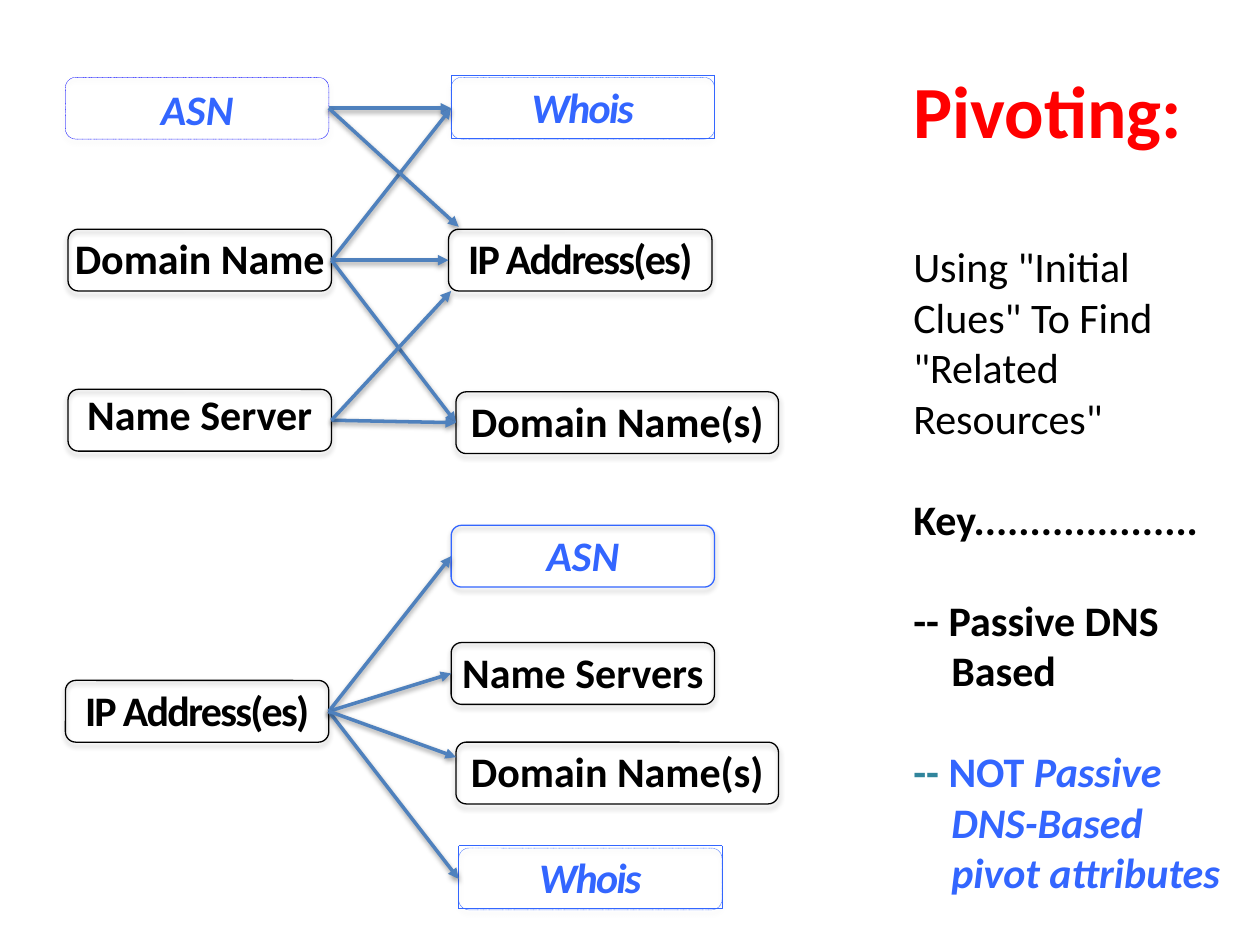
from lxml import etree
from pptx import Presentation
from pptx import util as u
from pptx.dml.color import RGBColor
from pptx.enum import dml, shapes, text
from pptx.oxml import ns

BLACK, BLUE, RED, TEAL, STEEL = "000000", "3366FF", "FF0000", "31859C", "4F81BD"
BOX_HEIGHT = 35.3
TOP, LEFT, BOTTOM, RIGHT = range(4)


def paint(color_format, color):
    color_format.rgb = RGBColor.from_string(color)


def add_node(parent, tag, **attributes):
    return etree.SubElement(parent, ns.qn(tag), attributes)


def add_shadow(properties, opacity, distance):
    """Append a soft downward shadow to shape properties."""
    effects = add_node(properties, "a:effectLst")
    outer = add_node(effects, "a:outerShdw", blurRad=str(u.Pt(3.1)),
                     dist=str(u.Pt(distance)), dir="5400000", rotWithShape="0")
    color = add_node(outer, "a:srgbClr", val=BLACK)
    add_node(color, "a:alpha", val=str(opacity * 1000))


def add_text(para, words, size=24, color=BLACK, bold=True, italic=False, spacing=0):
    """Add one formatted span per line, with line breaks between them."""
    for index, line in enumerate(words.split("\n")):
        if index:
            para.add_line_break()
        span = para.add_run()
        span.text = line
        font = span.font
        font.name, font.size = "Calibri", u.Pt(size)
        font.bold, font.italic = bold, italic
        paint(font.color, color)
        if spacing:
            span._r.get_or_add_rPr().set("spc", str(spacing * 100))


class Diagram:
    def __init__(self, page):
        self.page = page

    def outline(self, shape, color, dotted):
        shape.fill.background()
        paint(shape.line.color, color)
        shape.line.width = u.Pt(0.25 if dotted else 0.75)
        if dotted:
            shape.line.dash_style = dml.MSO_LINE.ROUND_DOT

    def text_box(self, left, top, width, height):
        box = self.page.shapes.add_textbox(*map(u.Pt, (left, top, width, height)))
        box.text_frame.word_wrap = True
        return box

    def node(self, words, left, top, width=150.5, color=BLACK, line=None,
             overhang=11, lift=1.4, spacing=0, dotted=False, framed=False):
        """Draw a rounded box with its label; a framed label has its own outline."""
        line = line or color
        box = self.page.shapes.add_shape(
            shapes.MSO_SHAPE.ROUNDED_RECTANGLE,
            *map(u.Pt, (left, top, width, BOX_HEIGHT)))
        self.outline(box, line, dotted)
        add_shadow(box._element.spPr, 35, 1.8)
        label = self.text_box(left - overhang, top - lift, width + 2 * overhang, 36)
        label.text_frame.auto_size = text.MSO_AUTO_SIZE.SHAPE_TO_FIT_TEXT
        if framed:
            self.outline(label, line, dotted)
        para = label.text_frame.paragraphs[0]
        para.alignment = text.PP_ALIGN.CENTER
        add_text(para, words, color=color, italic=color == BLUE, spacing=spacing)
        return box

    def arrow(self, source, target=None, point=(0, 0)):
        """Run from a box's right side to a target's left side, or to a point."""
        start = (source.left + source.width, source.top + source.height // 2)
        link = self.page.shapes.add_connector(
            shapes.MSO_CONNECTOR.STRAIGHT, *start, *map(u.Pt, point))
        link.begin_connect(source, RIGHT)
        if target is not None:
            link.end_connect(target, LEFT)
        paint(link.line.color, STEEL)
        link.line.width = u.Pt(2)
        add_node(link.line._get_or_add_ln(), "a:tailEnd", type="triangle")
        add_shadow(link._element.spPr, 38, 1.6)

    def side_text(self, left, top, width, height, paragraphs):
        """Write (space before, hanging indent, spans) paragraphs, centred in height."""
        frame = self.text_box(left, top, width, height).text_frame
        frame.vertical_anchor = text.MSO_ANCHOR.MIDDLE
        for index, (gap, indent, spans) in enumerate(paragraphs):
            para = frame.add_paragraph() if index else frame.paragraphs[0]
            para.space_before = u.Pt(gap)
            if indent:
                properties = para._p.get_or_add_pPr()
                properties.set("marL", str(u.Pt(indent)))
                properties.set("indent", str(-u.Pt(indent)))
            for words, style in spans:
                add_text(para, words, **style)


def main():
    deck = Presentation()
    deck.slide_width, deck.slide_height = u.Pt(720), u.Pt(540)
    diagram = Diagram(deck.slides.add_slide(deck.slide_layouts[6]))

    address = dict(overhang=0, spacing=-1)
    whois = dict(color=BLUE, overhang=0, spacing=-1, dotted=True, framed=True)

    asn = diagram.node("ASN", 37.4, 44.2, color=BLUE, line="0000FF",
                       overhang=0, lift=0, dotted=True)
    domain = diagram.node("Domain Name", 38.9, 131)
    server = diagram.node("Name Server", 38.9, 222.5, lift=4.3)
    ip = diagram.node("IP Address(es)", 37.4, 388.8, **address)

    found_whois = diagram.node("Whois", 257.8, 44.2, **whois)
    found_ip = diagram.node("IP Address(es)", 256.3, 131, **address)
    found_domains = diagram.node("Domain Name(s)", 260.6, 223.9, 184.3)

    ip_results = [
        diagram.node("ASN", 257.8, 300.2, color=BLUE),
        diagram.node("Name Servers", 257.8, 367.2),
        diagram.node("Whois", 262.1, 484.6, **whois),
    ]
    diagram.node("Domain Name(s)", 260.6, 424.1, 184.3)

    links = [(asn, found_whois), (domain, found_whois), (domain, found_ip),
             (domain, found_domains), (server, found_domains)]
    links += [(ip, result) for result in ip_results]
    for source, target in links:
        diagram.arrow(source, target)
    for source, point in [(asn, (262.1, 129.6)), (server, (257.8, 166.3)),
                          (ip, (260.6, 432.7))]:
        diagram.arrow(source, point=point)

    diagram.side_text(514.8, 30.2, 205.2, 489.6, [
        (0, 0, [("Pivoting:", dict(size=42, color=RED))]),
        (50, 0, [('Using "Initial\nClues" To Find\n"Related\nResources"',
                  dict(bold=False))]),
        (29, 0, [("Key....................", {})]),
        (29, 21.7, [("-- Passive DNS\nBased", {})]),
        (29, 21.7, [("-- ", dict(color=TEAL)),
                    ("NOT", dict(color=BLUE)),
                    (" Passive\nDNS-Based\npivot attributes",
                     dict(color=BLUE, italic=True))]),
    ])
    deck.save("out.pptx")


if __name__ == "__main__":
    main()
